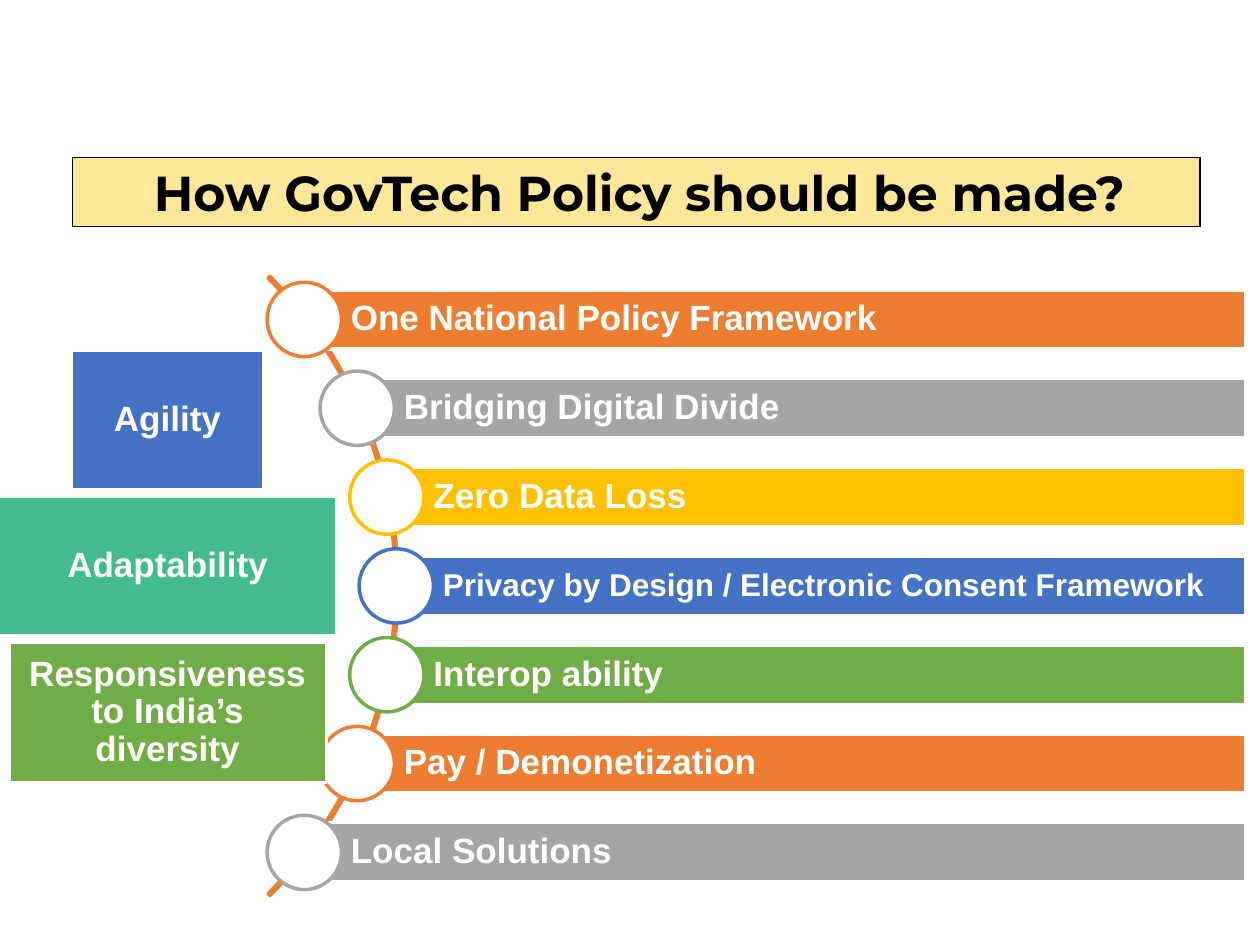
from dataclasses import dataclass

from pptx import Presentation
from pptx.dml.color import RGBColor
from pptx.enum.shapes import MSO_SHAPE
from pptx.enum.text import MSO_ANCHOR, PP_ALIGN
from pptx.util import Inches, Pt

COLUMNS, ROWS = 100, 75
CELL = Inches(0.1)

COLORS = {
    "orange": "ED7D31",
    "gray": "A5A5A5",
    "gold": "FFC000",
    "blue": "4472C4",
    "green": "70AD47",
    "teal": "43BB8D",
    "cream": "FFE699",
    "white": "FFFFFF",
    "black": "000000",
}

PRINCIPLES = [
    ("One National Policy Framework", "orange", 20),
    ("Bridging Digital Divide", "gray", 20),
    ("Zero Data Loss", "gold", 20),
    ("Privacy by Design / Electronic Consent Framework", "blue", 18),
    ("Interop ability", "green", 20),
    ("Pay / Demonetization", "orange", 20),
    ("Local Solutions", "gray", 20),
]
INDENT_BY_DISTANCE = [7.3, 6.55, 4.2, 0]

QUALITIES = [
    ("Agility", "blue", 15.3),
    ("Adaptability", "teal", 26.9),
    ("Responsiveness to India’s diversity", "green", 25.2),
]


@dataclass
class Box:
    """A rectangle measured in grid columns and rows."""

    left: float
    top: float
    width: float
    height: float

    def lengths(self):
        """Return the four lengths in EMU."""
        return [round(n * CELL) for n in (self.left, self.top, self.width, self.height)]


def add_outline_shape(slide, kind, box, fill, line, line_width=2):
    """Add a shadowless preset shape; a fill of None leaves it open."""
    shape = slide.shapes.add_shape(kind, *box.lengths())
    shape.shadow.inherit = False
    if fill:
        shape.fill.solid()
        shape.fill.fore_color.rgb = RGBColor.from_string(COLORS[fill])
    else:
        shape.fill.background()
    shape.line.color.rgb = RGBColor.from_string(COLORS[line])
    shape.line.width = Pt(line_width)
    return shape


def write_label(shape, text, size, align=PP_ALIGN.CENTER, left_inset=0.6, inset=0.6,
                font="Arial", color="white", spacing=0.9):
    """Write one bold, vertically centred paragraph in a shape."""
    frame = shape.text_frame
    frame.word_wrap = True
    frame.vertical_anchor = MSO_ANCHOR.MIDDLE
    frame.margin_left = round(left_inset * CELL)
    frame.margin_top = frame.margin_right = frame.margin_bottom = round(inset * CELL)
    paragraph = frame.paragraphs[0]
    paragraph.text = text
    paragraph.alignment = align
    paragraph.line_spacing = spacing
    paragraph.font.name = font
    paragraph.font.size = Pt(size)
    paragraph.font.bold = True
    paragraph.font.color.rgb = RGBColor.from_string(COLORS[color])


def add_principles(slide, box):
    """Place the bars and circles along an arc that bulges to the right."""
    diameter, bar_height, arc_size = 5.9, 4.7, 69.5
    pitch = (box.height - diameter) / (len(PRINCIPLES) - 1)
    arc_box = Box(box.left - 59.1, box.top + (box.height - arc_size) / 2, arc_size, arc_size)
    arc = add_outline_shape(slide, MSO_SHAPE.BLOCK_ARC, arc_box, None, "orange")
    for index, value in enumerate((189, 27, 0.003)):
        arc.adjustments[index] = value

    middle = len(PRINCIPLES) // 2
    for index, (text, color, size) in enumerate(PRINCIPLES):
        left = box.left + INDENT_BY_DISTANCE[abs(index - middle)]
        top = box.top + index * pitch
        bar_left = left + diameter / 2
        bar_box = Box(bar_left, top + (diameter - bar_height) / 2,
                      box.left + box.width - bar_left, bar_height)
        bar = add_outline_shape(slide, MSO_SHAPE.RECTANGLE, bar_box, color, "white")
        write_label(bar, text, size, PP_ALIGN.LEFT, left_inset=3.7)
        add_outline_shape(slide, MSO_SHAPE.OVAL, Box(left, top, diameter, diameter),
                          "white", color)


def add_qualities(slide, box):
    """Stack the quality blocks, centred on the box."""
    gap = 0.5
    height = (box.height - gap * (len(QUALITIES) - 1)) / len(QUALITIES)
    for index, (text, color, width) in enumerate(QUALITIES):
        block_box = Box(box.left + (box.width - width) / 2,
                        box.top + index * (height + gap), width, height)
        block = add_outline_shape(slide, MSO_SHAPE.RECTANGLE, block_box, color, "white")
        write_label(block, text, 20)


def add_title(slide, box):
    """Place the title banner."""
    banner = add_outline_shape(slide, MSO_SHAPE.RECTANGLE, box, "cream", "black", 0.75)
    write_label(banner, "How GovTech Policy should be made?", 28, left_inset=1, inset=0.5,
                font="Montserrat", color="black", spacing=1.0)


def main():
    """Build the slide and save it."""
    presentation = Presentation()
    presentation.slide_width = COLUMNS * CELL
    presentation.slide_height = ROWS * CELL
    slide = presentation.slides.add_slide(presentation.slide_layouts[6])
    add_principles(slide, Box(21.2, 22.4, 77.65, 48.2))
    add_qualities(slide, Box(-0.15, 27.8, 26.9, 34.3))
    add_title(slide, Box(5.75, 12.5, 89.5, 5.5))
    presentation.save("out.pptx")


if __name__ == "__main__":
    main()
